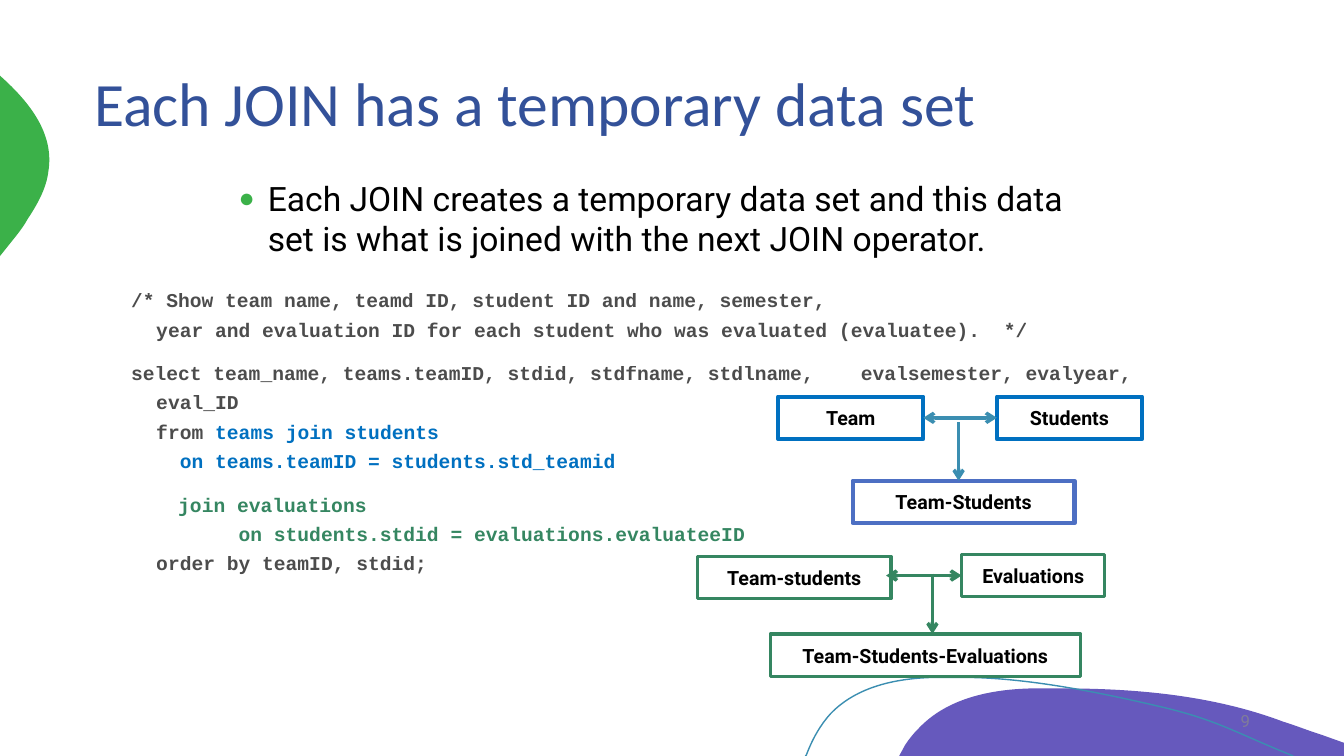
from copy import deepcopy
from dataclasses import dataclass
from typing import Optional

from lxml.etree import SubElement
from pptx import Presentation
from pptx.dml.color import RGBColor
from pptx.enum.shapes import MSO_CONNECTOR, MSO_SHAPE
from pptx.enum.text import MSO_ANCHOR, MSO_AUTO_SIZE, PP_ALIGN
from pptx.oxml.ns import qn
from pptx.util import Inches, Pt

CELL = Inches(0.1)  # the slide is a grid of square cells
COLUMNS, ROWS = 133.33, 75
BOX_ROWS = 4.2
RIGHT_SIDE, LEFT_SIDE = 3, 1


@dataclass(frozen=True)
class Theme:
    title: str = "335199"
    black: str = "000000"
    number: str = "8C8C8C"
    purple: str = "6659BD"
    leaf: str = "3BB149"
    teal: str = "3B8EB1"
    blue: str = "0070C0"
    indigo: str = "4D6FC3"
    green: str = "358661"
    title_font: str = "Calibri"
    code_font: str = "Courier New"
    text_font: str = "Roboto"
    title_size: int = 44
    bullet_size: int = 24
    label_size: int = 14
    number_size: int = 12
    faded: int = 70


THEME = Theme()


@dataclass(frozen=True)
class CodePart:
    text: str
    color: str = THEME.black


@dataclass(frozen=True)
class Box:
    label: str
    column: float
    row: float
    columns: float
    color: str
    line_width: float


@dataclass(frozen=True)
class Arrow:
    start: tuple
    end: tuple
    color: str
    start_box: Optional[str] = None
    end_box: Optional[str] = None
    two_headed: bool = False


@dataclass(frozen=True)
class Outline:
    """A start point, then segments of one point (line) or three points (curve)."""
    start: tuple
    segments: tuple
    fill: Optional[str] = None
    line: Optional[str] = None


OUTLINES = (
    Outline((105.4, 68.3), (
        ((112.8, 68.3), (120.4, 69), (127.3, 71.6)),
        ((128.6, 72), (129.8, 72.5), (131.1, 72.9)),
        ((133.33, 73.7),), ((133.33, 75),), ((89.2, 75),), ((89.8, 73.9),),
        ((90.2, 73.3), (90.6, 72.8), (91.1, 72.3)),
        ((93.9, 69.3), (98.2, 68.4), (102.3, 68.3)),
        ((103.3, 68.3), (104.3, 68.3), (105.4, 68.3))), fill=THEME.purple),
    Outline((0, 7.5), (
        ((0.1, 7.6),),
        ((3, 10.2), (5.4, 13.3), (4.8, 17)),
        ((4.6, 18.7), (3.7, 20.3), (2.7, 21.8)),
        ((2.4, 22.4), (1.7, 23.3), (0.8, 24.4)),
        ((0, 25.4),)), fill=THEME.leaf),
    Outline((79.9, 75), (
        ((80, 74.9),),
        ((80.6, 73.3), (81.4, 71.9), (82.4, 70.8)),
        ((85, 68.1), (88.9, 67.3), (92.6, 67.2)),
        ((95.5, 67.2),),
        ((102.2, 67.2), (110, 68.9), (115.5, 70.2)),
        ((120.9, 71.5), (122.6, 72.7), (128.3, 75))), line=THEME.teal),
)

CODE = (
    (CodePart("/* Show team name, teamd ID, student ID and name, semester, \n"
              "year and evaluation ID for each student who was evaluated (evaluatee).  */"),),
    (CodePart("select team_name, teams.teamID, stdid, stdfname, stdlname,    "
              "evalsemester, evalyear, eval_ID\nfrom "),
     CodePart("teams join students \n  on teams.teamID = students.std_teamid", THEME.blue)),
    (CodePart("    "),
     CodePart("join evaluations\n       on students.stdid = evaluations.evaluateeID\n",
              THEME.green),
     CodePart("order by teamID, stdid;")),
)

BOXES = (
    Box("Team", 77.2, 39.35, 14.4, THEME.blue, 3),
    Box("Students", 98.9, 39.35, 14.4, THEME.blue, 3),
    Box("Team-Students", 84.6, 47.7, 22, THEME.indigo, 3),
    Box("Team-students", 69.2, 55.2, 19.2, THEME.green, 2.25),
    Box("Evaluations", 95.4, 55, 14.2, THEME.green, 2.25),
    Box("Team-Students-Evaluations", 76.4, 62.9, 30.8, THEME.green, 2.25),
)

ARROWS = (
    Arrow((91.6, 41.45), (98.9, 41.45), THEME.teal, "Team", "Students", True),
    Arrow((95.1, 41.9), (95.1, 47.7), THEME.teal),
    Arrow((87.9, 57.1), (95.4, 57.1), THEME.green, end_box="Evaluations", two_headed=True),
    Arrow((92.5, 56.9), (92.5, 62.9), THEME.green),
)


def cells(*lengths: float) -> list[int]:
    return [round(length * CELL) for length in lengths]


def place(shape, column: float, row: float, columns: float, rows: float) -> None:
    shape.left, shape.top, shape.width, shape.height = cells(column, row, columns, rows)


def add_text(paragraph, text: str, *, size: float, font: str, color: str,
             bold: bool = False, opacity: int = 100) -> None:
    """Add text in one format; each newline becomes a line break of the same size."""
    for index, line in enumerate(text.split("\n")):
        if index:
            paragraph.add_line_break()
            paragraph._p[-1].append(deepcopy(run._r.rPr))
        if not line:
            continue
        run = paragraph.add_run()
        run.text = line
        run.font.size, run.font.name, run.font.bold = Pt(size), font, bold
        run.font.color.rgb = RGBColor.from_string(color)
        if opacity < 100:
            color_element = run._r.find(".//" + qn("a:srgbClr"))
            SubElement(color_element, qn("a:alpha"), val=str(opacity * 1000))


def set_hanging(paragraph, columns: float, bullet: Optional[str] = None) -> None:
    properties = paragraph._p.get_or_add_pPr()
    margin, first = cells(columns, -columns)
    properties.set("marL", str(margin))
    properties.set("indent", str(first))
    if bullet:
        color = SubElement(properties, qn("a:buClr"))
        SubElement(color, qn("a:srgbClr"), val=THEME.leaf)
        SubElement(properties, qn("a:buSzPct"), val="80000")
        SubElement(properties, qn("a:buChar"), char=bullet)
    else:
        SubElement(properties, qn("a:buNone"))


def add_outline(slide, outline: Outline):
    builder = slide.shapes.build_freeform(*cells(*outline.start))
    builder.add_line_segments([cells(*segment[-1]) for segment in outline.segments],
                              close=bool(outline.fill))
    shape = builder.convert_to_shape()
    for element, segment in zip(shape._element.findall(".//" + qn("a:lnTo")), outline.segments):
        if len(segment) == 3:
            element.tag = qn("a:cubicBezTo")
            element.remove(element[0])
            for x, y in (cells(*point) for point in segment):
                SubElement(element, qn("a:pt"), x=str(x - shape.left), y=str(y - shape.top))
    shape.shadow.inherit = False
    if outline.fill:
        shape.fill.solid()
        shape.fill.fore_color.rgb = RGBColor.from_string(outline.fill)
        shape.line.fill.background()
    else:
        shape.fill.background()
        shape.line.color.rgb = RGBColor.from_string(outline.line)
        shape.line.width = Pt(1)
    return shape


def add_box(slide, box: Box):
    shape = slide.shapes.add_shape(
        MSO_SHAPE.RECTANGLE, *cells(box.column, box.row, box.columns, BOX_ROWS))
    shape.shadow.inherit = False
    shape.fill.background()
    shape.line.color.rgb = RGBColor.from_string(box.color)
    shape.line.width = Pt(box.line_width)
    shape.text_frame.vertical_anchor = MSO_ANCHOR.MIDDLE
    paragraph = shape.text_frame.paragraphs[0]
    paragraph.alignment = PP_ALIGN.CENTER
    add_text(paragraph, box.label, size=THEME.label_size, font=THEME.text_font,
             color=THEME.black, bold=True)
    return shape


def add_arrow(slide, arrow: Arrow, boxes: dict) -> None:
    connector = slide.shapes.add_connector(
        MSO_CONNECTOR.STRAIGHT, *cells(*arrow.start, *arrow.end))
    if arrow.start_box:
        connector.begin_connect(boxes[arrow.start_box], RIGHT_SIDE)
    if arrow.end_box:
        connector.end_connect(boxes[arrow.end_box], LEFT_SIDE)
    connector.line.color.rgb = RGBColor.from_string(arrow.color)
    connector.line.width = Pt(2.5)
    line = connector.line._get_or_add_ln()
    for end in ("a:headEnd", "a:tailEnd") if arrow.two_headed else ("a:tailEnd",):
        SubElement(line, qn(end), type="arrow")
    SubElement(connector._element.spPr, qn("a:effectLst"))


def fill_title(title) -> None:
    place(title, 8.33, 2.2, 116.7, 16.7)
    title.text_frame.vertical_anchor = MSO_ANCHOR.MIDDLE
    paragraph = title.text_frame.paragraphs[0]
    paragraph.alignment, paragraph.line_spacing = PP_ALIGN.LEFT, 0.9
    add_text(paragraph, "Each JOIN has a temporary data set", size=THEME.title_size,
             font=THEME.title_font, color=THEME.title)


def fill_bullet(body) -> None:
    place(body, 21.67, 16.65, 87.5, 11.7)
    frame = body.text_frame
    frame.margin_left, frame.margin_top, frame.margin_right, frame.margin_bottom = cells(2, 1, 1, 0.5)
    paragraph = frame.paragraphs[0]
    paragraph.space_before = Pt(2.5)
    set_hanging(paragraph, 2.9, "●")
    add_text(paragraph, "Each JOIN creates a temporary data set and this data set is what is "
             "joined with the next JOIN operator.", size=THEME.bullet_size,
             font=THEME.text_font, color=THEME.black)


def fill_code(body) -> None:
    place(body, 12, 27.5, 108.3, 42.5)
    frame = body.text_frame
    for index, parts in enumerate(CODE):
        paragraph = frame.add_paragraph() if index else frame.paragraphs[0]
        paragraph.line_spacing, paragraph.space_before = 1.25, Pt(10)
        set_hanging(paragraph, 2.5)
        for part in parts:
            add_text(paragraph, part.text, size=THEME.label_size, font=THEME.code_font,
                     color=part.color, bold=True,
                     opacity=THEME.faded if part.color == THEME.black else 100)


def add_slide_number(slide) -> None:
    text_box = slide.shapes.add_textbox(*cells(108.3, 69.5, 16.7, 4))
    text_box.text_frame.word_wrap = True
    text_box.text_frame.vertical_anchor = MSO_ANCHOR.MIDDLE
    paragraph = text_box.text_frame.paragraphs[0]
    paragraph.alignment = PP_ALIGN.RIGHT
    add_text(paragraph, "9", size=THEME.number_size, font=THEME.text_font,
             color=THEME.number, opacity=THEME.faded)


def main() -> None:
    presentation = Presentation()
    presentation.slide_width, presentation.slide_height = cells(COLUMNS, ROWS)
    slide = presentation.slides.add_slide(presentation.slide_layouts.get_by_name("Two Content"))
    title, code, bullet = slide.placeholders
    for placeholder in (title, code, bullet):
        placeholder.text_frame.auto_size = MSO_AUTO_SIZE.NONE
    fill_title(title)
    fill_code(code)
    fill_bullet(bullet)
    for outline in OUTLINES:
        title._element.addprevious(add_outline(slide, outline)._element)
    add_slide_number(slide)
    boxes = {box.label: add_box(slide, box) for box in BOXES}
    for arrow in ARROWS:
        add_arrow(slide, arrow, boxes)
    presentation.save("out.pptx")


if __name__ == "__main__":
    main()
